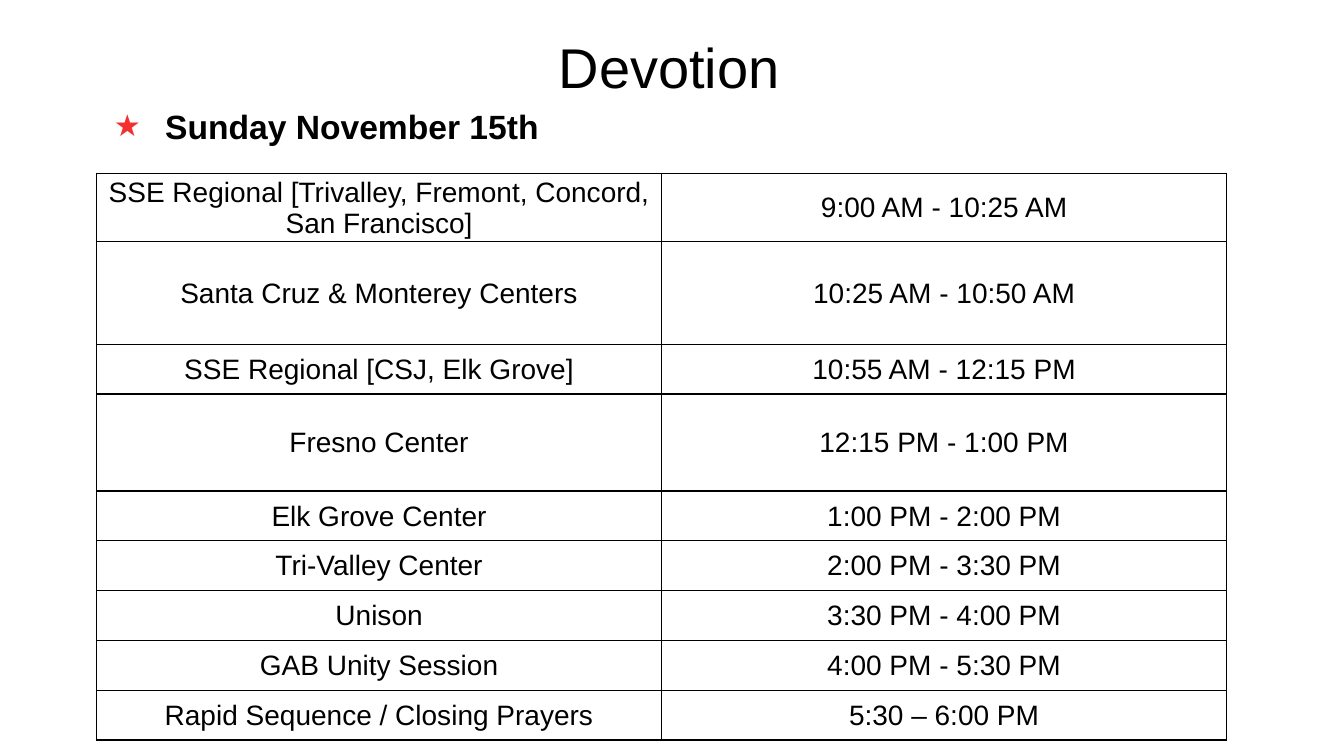
import dataclasses

import pptx
import pptx.dml.color
import pptx.enum.text
import pptx.oxml
import pptx.oxml.ns
import pptx.util

Pt = pptx.util.Pt
Align = pptx.enum.text.PP_ALIGN
Anchor = pptx.enum.text.MSO_ANCHOR


@dataclasses.dataclass(frozen=True)
class Theme:
    font: str = "Arial"
    ink: str = "000000"
    star: str = "F3302F"
    paper: str = "FFFFFF"
    title_size: int = 40
    heading_size: int = 24
    table_size: int = 20


SHORT_ROW, FIRST_ROW, CENTERS_ROW, FRESNO_ROW = 35.6, 41, 73.3, 69.4
SCHEDULE = [
    ("SSE Regional [Trivalley, Fremont, Concord, San Francisco]",
     "9:00 AM - 10:25 AM", FIRST_ROW),
    ("Santa Cruz & Monterey Centers", "10:25 AM - 10:50 AM", CENTERS_ROW),
    ("SSE Regional [CSJ, Elk Grove]", "10:55 AM - 12:15 PM", SHORT_ROW),
    ("Fresno Center", "12:15 PM - 1:00 PM", FRESNO_ROW),
    ("Elk Grove Center", "1:00 PM - 2:00 PM", SHORT_ROW),
    ("Tri-Valley Center", "2:00 PM - 3:30 PM", SHORT_ROW),
    ("Unison", "3:30 PM - 4:00 PM", SHORT_ROW),
    ("GAB Unity Session", "4:00 PM - 5:30 PM", SHORT_ROW),
    ("Rapid Sequence / Closing Prayers", "5:30 – 6:00 PM", SHORT_ROW),
]


def drawing_element(tag, content="", **attributes):
    """Return one DrawingML element, with optional inner XML."""
    values = "".join(f' {name}="{value}"' for name, value in attributes.items())
    namespace = pptx.oxml.ns.nsdecls("a")
    return pptx.oxml.parse_xml(f"<a:{tag} {namespace}{values}>{content}</a:{tag}>")


def write_text(text_frame, text, *, font, size, color, bold=False,
               align=Align.LEFT, bullet=None, bullet_color=None, indent=0):
    paragraph = text_frame.paragraphs[0]
    paragraph.alignment = align
    if bullet:
        properties = paragraph._p.get_or_add_pPr()
        properties.set("marL", str(Pt(indent)))
        properties.set("indent", str(-Pt(indent)))
        properties.append(drawing_element("buClr", f'<a:srgbClr val="{bullet_color}"/>'))
        properties.append(drawing_element("buSzPct", val=90000))
        properties.append(drawing_element("buFont", typeface=font))
        properties.append(drawing_element("buChar", char=bullet))
    run = paragraph.add_run()
    run.text = text
    run.font.name = font
    run.font.size = Pt(size)
    run.font.bold = bold
    run.font.color.rgb = pptx.dml.color.RGBColor.from_string(color)


class SlideBuilder:
    def __init__(self, slide, theme):
        self.slide = slide
        self.theme = theme

    def text_box(self, text, left, top, width, height, *, size,
                 anchor=Anchor.TOP, margin_top=3.6, **text_format):
        shape = self.slide.shapes.add_textbox(Pt(left), Pt(top), Pt(width), Pt(height))
        text_frame = shape.text_frame
        text_frame.word_wrap = True
        text_frame.vertical_anchor = anchor
        text_frame.margin_top = Pt(margin_top)
        write_text(text_frame, text, font=self.theme.font, size=size,
                   color=self.theme.ink, **text_format)

    def cell(self, cell, text):
        cell.fill.solid()
        cell.fill.fore_color.rgb = pptx.dml.color.RGBColor.from_string(self.theme.paper)
        cell.vertical_anchor = Anchor.MIDDLE
        cell.margin_left = cell.margin_right = cell.margin_top = Pt(0.7)
        cell.margin_bottom = Pt(0)
        write_text(cell.text_frame, text, font=self.theme.font,
                   size=self.theme.table_size, color=self.theme.ink,
                   align=Align.CENTER)
        # Borders come before the fill in the cell properties
        line = f'<a:solidFill><a:srgbClr val="{self.theme.ink}"/></a:solidFill>'
        for position, side in enumerate(("lnL", "lnR", "lnT", "lnB")):
            cell._tc.get_or_add_tcPr().insert(
                position, drawing_element(side, line, w=Pt(1)))

    def table(self, rows, left, top, column_width):
        height = sum(row_height for *_, row_height in rows)
        frame = self.slide.shapes.add_table(
            len(rows), 2, Pt(left), Pt(top), Pt(2 * column_width), Pt(height))
        table = frame.table
        table.first_row = table.horz_banding = False
        for column in table.columns:
            column.width = Pt(column_width)
        for row, (*texts, row_height) in zip(table.rows, rows):
            row.height = Pt(row_height)
            for cell, text in zip(row.cells, texts):
                self.cell(cell, text)


def main():
    presentation = pptx.Presentation()
    presentation.slide_width = Pt(960)
    presentation.slide_height = Pt(540)
    slide = presentation.slides.add_slide(presentation.slide_layouts[6])
    theme = Theme()
    builder = SlideBuilder(slide, theme)

    # Title
    builder.text_box("Devotion", 64, 19.4, 828, 56.2, size=theme.title_size,
                     anchor=Anchor.MIDDLE, align=Align.CENTER)

    # Date heading with a star bullet
    builder.text_box("Sunday November 15th", 74.2, 69.1, 819.4, 342,
                     size=theme.heading_size, margin_top=6.5, bold=True,
                     bullet="★", bullet_color=theme.star, indent=36.7)

    # Schedule
    builder.table(SCHEDULE, 69, 123.8, 403.6)

    presentation.save("out.pptx")


if __name__ == "__main__":
    main()
